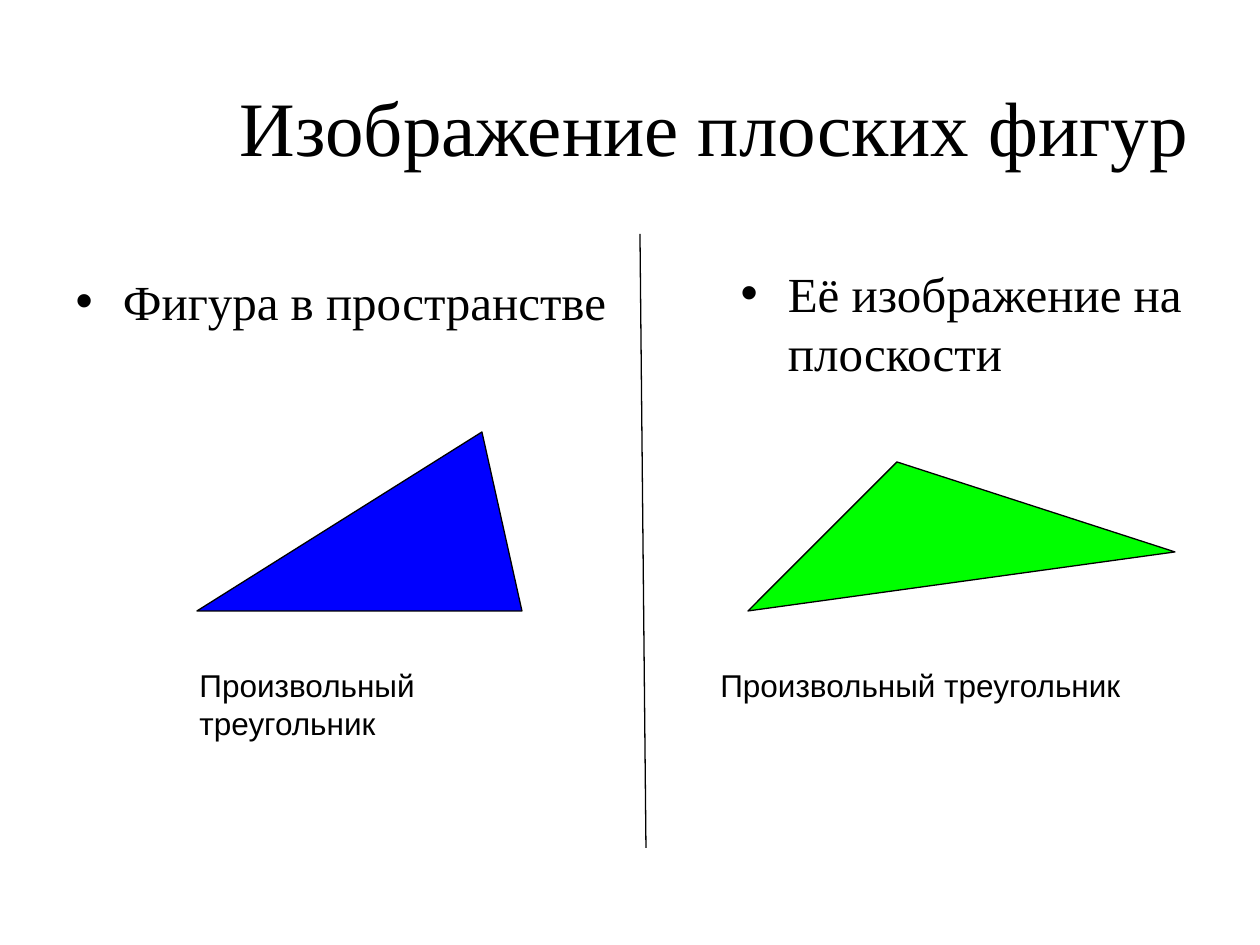
from lxml.etree import SubElement
from pptx import Presentation
from pptx.dml.color import RGBColor
from pptx.enum.shapes import MSO_CONNECTOR as Connector
from pptx.enum.text import MSO_ANCHOR as Anchor, MSO_AUTO_SIZE as AutoSize, PP_ALIGN as Align
from pptx.oxml.ns import qn
from pptx.util import Pt

SCALE = 914400 / 126
COLOURS = {"ink": "000000", "space": "0000FF", "plane": "00FF00"}
SERIF, SANS = "Times New Roman", "Arial"
CAPTION = "Произвольный треугольник"


def px(length):
    """Turn pixels into EMU."""
    return round(length * SCALE)


def colour(name):
    """Look up a colour by its role."""
    return RGBColor.from_string(COLOURS[name])


def apply(target, values):
    """Set each attribute of target from a dict."""
    for name, value in values.items():
        setattr(target, name, value)


def write(box, text, font, size, anchor=Anchor.TOP, align=Align.LEFT):
    """Put one formatted paragraph into a box."""
    frame = box.text_frame
    frame.text = text
    apply(frame, {"word_wrap": True, "auto_size": AutoSize.NONE, "vertical_anchor": anchor})
    para = frame.paragraphs[0]
    para.alignment = align
    span = para.runs[0]
    apply(span.font, {"name": font, "size": Pt(size)})
    span.font.color.rgb = colour("ink")


def fill_placeholder(page, index, area, text, size, **layout):
    """Move a template placeholder and write its text."""
    box = page.placeholders[index]
    apply(box, dict(zip(("left", "top", "width", "height"), map(px, area))))
    write(box, text, SERIF, size, **layout)


def add_caption(page, left, width):
    """Add a caption below a triangle."""
    box = page.shapes.add_textbox(*map(px, (left, 660, width, 50)))
    write(box, CAPTION, SANS, 18)


def outline(shape):
    """Give a shape the thin dark line."""
    shape.line.color.rgb = colour("ink")
    shape.line.width = Pt(0.75)


def add_triangle(page, corners, fill):
    """Draw a filled triangle through three corners."""
    start, *others = corners
    builder = page.shapes.build_freeform(*start, scale=SCALE)
    builder.add_line_segments(others, close=True)
    triangle = builder.convert_to_shape()
    triangle.shadow.inherit = False
    triangle.fill.solid()
    triangle.fill.fore_color.rgb = colour(fill)
    outline(triangle)


def add_divider(page, start, end):
    """Draw the line between the two halves."""
    divider = page.shapes.add_connector(Connector.STRAIGHT, *map(px, start + end))
    outline(divider)
    SubElement(divider._element.spPr, qn("a:effectLst"))


def main():
    """Build and save the slide."""
    deck = Presentation()
    apply(deck, {"slide_width": px(1260), "slide_height": px(945)})
    page = deck.slides.add_slide(deck.slide_layouts.get_by_name("Two Content"))
    fill_placeholder(page, 0, (198, 47, 1033, 157), "Изображение плоских фигур", 44,
                     anchor=Anchor.MIDDLE, align=Align.CENTER)
    fill_placeholder(page, 1, (63, 265, 557, 624), "Фигура в пространстве", 28)
    fill_placeholder(page, 2, (728, 257, 504, 643), "Её изображение на плоскости", 28)
    add_divider(page, (640, 234), (646, 848))
    add_triangle(page, [(748, 611), (897, 462), (1175, 552)], "plane")
    add_triangle(page, [(197, 611), (482, 432), (522, 611)], "space")
    add_caption(page, 187, 411)
    add_caption(page, 708, 466)
    deck.save("out.pptx")


if __name__ == "__main__":
    main()
